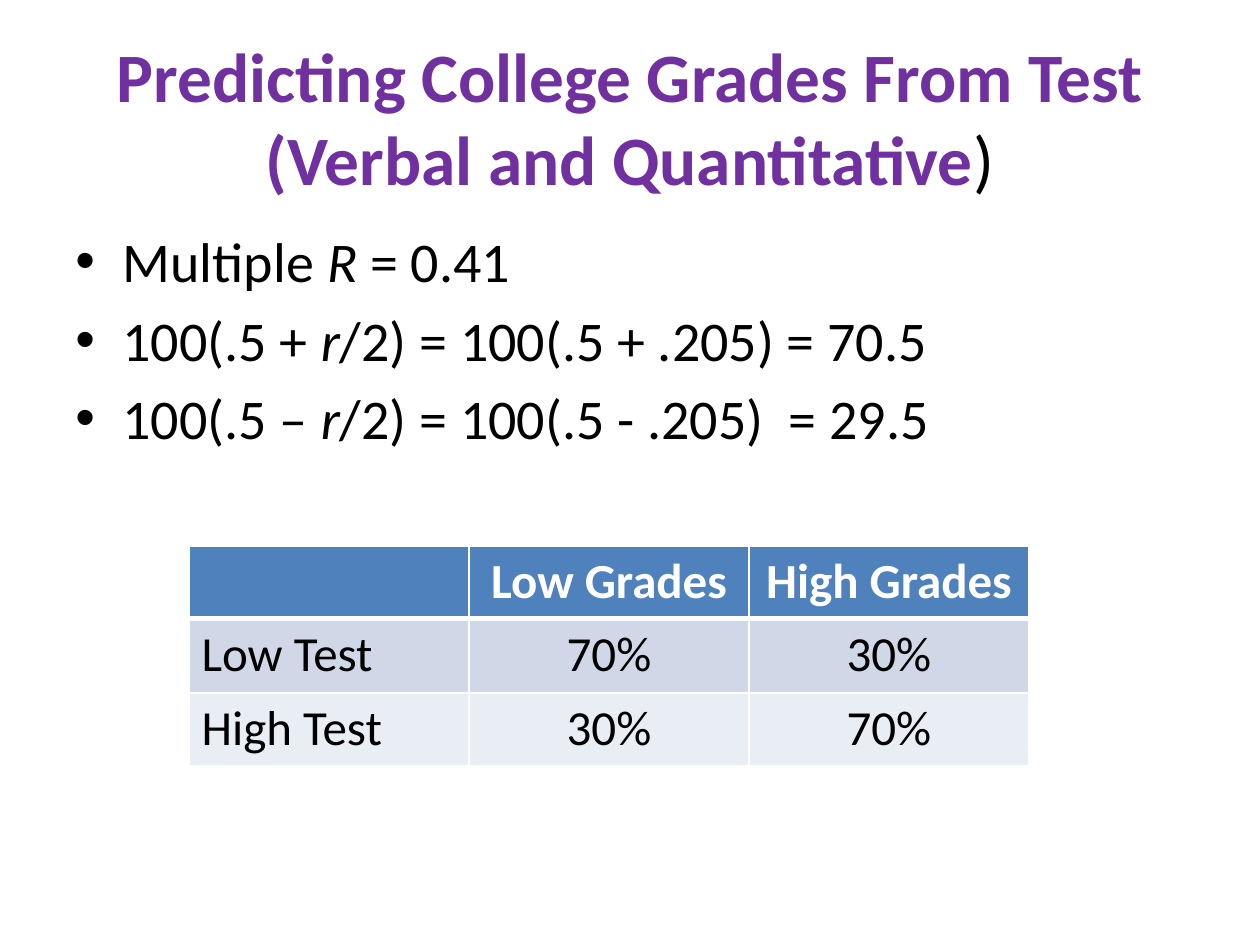
from lxml.etree import SubElement
from pptx import Presentation
from pptx.dml.color import RGBColor
from pptx.enum.text import MSO_ANCHOR, MSO_AUTO_SIZE, PP_ALIGN
from pptx.oxml.ns import qn
from pptx.util import Pt

COLORS = {
    "purple": "7030A0",
    "black": "000000",
    "white": "FFFFFF",
    "header": "4F81BD",
    "odd_row": "D0D8E8",
    "even_row": "E9EDF4",
}
TITLE = [("Predicting College Grades From Test (Verbal and Quantitative", "purple", True),
         (")", "black", False)]
FORMULAS = [
    ("Multiple ", "R", " = 0.41"),
    ("100(.5 + ", "r", "/2) = 100(.5 + .205) = 70.5"),
    ("100(.5 – ", "r", "/2) = 100(.5 - .205)  = 29.5"),
]
GRADES = [
    ("", "Low Grades", "High Grades"),
    ("Low Test", "70%", "30%"),
    ("High Test", "30%", "70%"),
]
ROW_FILLS = ["header", "odd_row", "even_row"]
ROW_HEIGHTS = [41, 42.5, 41]
TITLE_BOX = (36, 21.6, 648, 90)
FORMULA_BOX = (36, 126, 648, 356.4)
TABLE_BOX = (108, 312, 480, sum(ROW_HEIGHTS))
INDENT = 27
FRAME_FORMAT = {"word_wrap": True, "auto_size": MSO_AUTO_SIZE.NONE}


def apply_format(target, values):
    for attribute, value in values.items():
        setattr(target, attribute, value)


def place(part, box):
    apply_format(part, dict(zip(("left", "top", "width", "height"), map(Pt, box))))


def add_text(paragraph, text, size, color="black", bold=False, italic=False):
    run = paragraph.add_run()
    run.text = text
    apply_format(run.font, {"name": "Calibri", "size": Pt(size), "bold": bold, "italic": italic})
    run.font.color.rgb = RGBColor.from_string(COLORS[color])


def add_bullet(paragraph):
    properties = paragraph._p.get_or_add_pPr()
    properties.set("marL", str(Pt(INDENT)))
    properties.set("indent", str(-Pt(INDENT)))
    SubElement(properties, qn("a:buFont"), typeface="Arial")
    SubElement(properties, qn("a:buChar"), char="•")


def add_border(cell, side, width):
    line = SubElement(cell._tc.get_or_add_tcPr(), qn(f"a:ln{side}"), w=str(Pt(width)))
    SubElement(SubElement(line, qn("a:solidFill")), qn("a:srgbClr"), val=COLORS["white"])


def add_title(slide):
    title = slide.shapes.title
    place(title, TITLE_BOX)
    apply_format(title.text_frame, {**FRAME_FORMAT, "vertical_anchor": MSO_ANCHOR.MIDDLE})
    paragraph = title.text_frame.paragraphs[0]
    paragraph.alignment = PP_ALIGN.CENTER
    for text, color, bold in TITLE:
        add_text(paragraph, text, 39.6, color, bold)


def add_formulas(slide):
    frame = slide.shapes.add_textbox(*map(Pt, FORMULA_BOX)).text_frame
    apply_format(frame, FRAME_FORMAT)
    for index, parts in enumerate(FORMULAS):
        paragraph = frame.add_paragraph() if index else frame.paragraphs[0]
        paragraph.space_before = Pt(6.4)
        add_bullet(paragraph)
        for position, text in enumerate(parts):
            add_text(paragraph, text, 32, italic=position == 1)


def add_grades(slide):
    grades = slide.shapes.add_table(len(GRADES), len(GRADES[0]), *map(Pt, TABLE_BOX)).table
    for row, height in enumerate(ROW_HEIGHTS):
        grades.rows[row].height = Pt(height)
        header = row == 0
        widths = {"L": 1, "R": 1, "T": 3 if row == 1 else 1, "B": 3 if header else 1}
        for column, text in enumerate(GRADES[row]):
            cell = grades.cell(row, column)
            for side, width in widths.items():
                add_border(cell, side, width)
            cell.fill.solid()
            cell.fill.fore_color.rgb = RGBColor.from_string(COLORS[ROW_FILLS[row]])
            if text:
                paragraph = cell.text_frame.paragraphs[0]
                paragraph.alignment = PP_ALIGN.CENTER if column else PP_ALIGN.LEFT
                add_text(paragraph, text, 28, "white" if header else "black", header)


def main():
    presentation = Presentation()
    apply_format(presentation, {"slide_width": Pt(720), "slide_height": Pt(540)})
    slide = presentation.slides.add_slide(presentation.slide_layouts[5])
    add_title(slide)
    add_formulas(slide)
    add_grades(slide)
    presentation.save("out.pptx")


if __name__ == "__main__":
    main()
